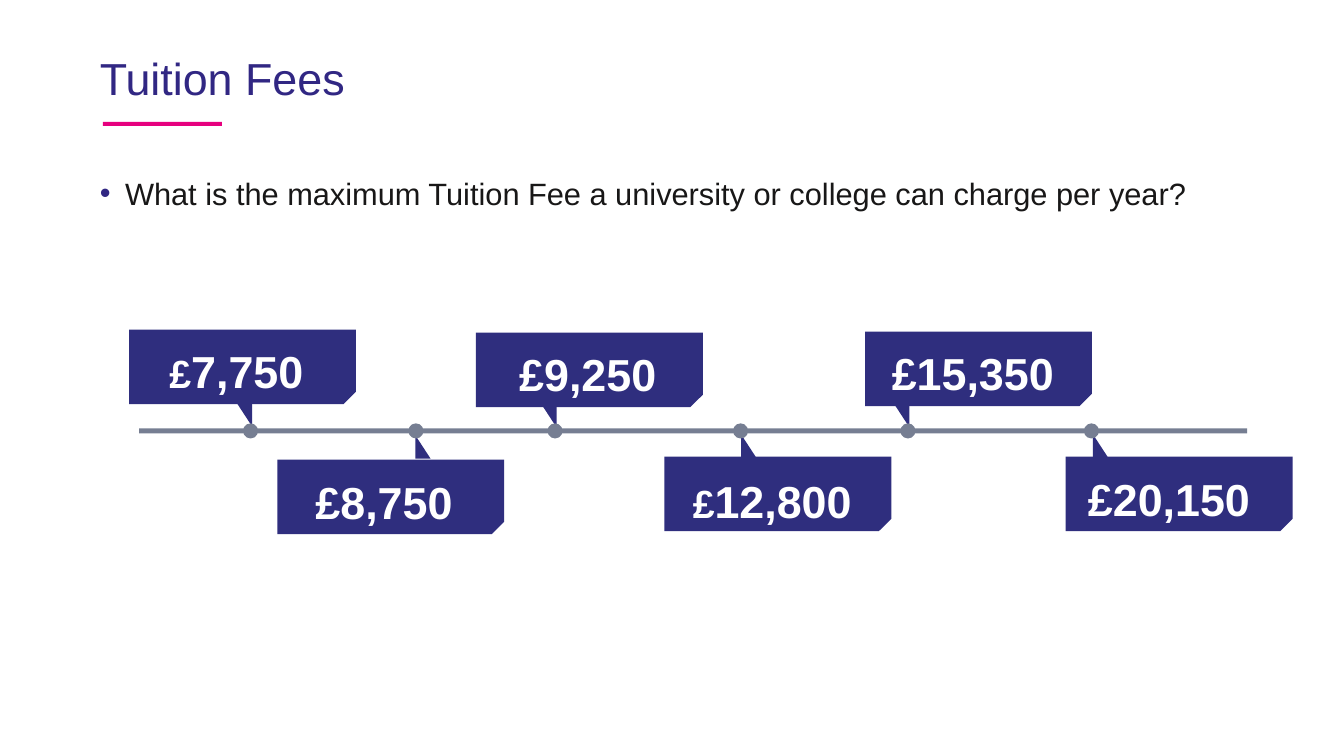
from collections import namedtuple

from lxml import etree
from pptx import Presentation
from pptx.dml.color import RGBColor
from pptx.enum.shapes import MSO_SHAPE as Preset
from pptx.enum.text import MSO_ANCHOR as Anchor, MSO_AUTO_SIZE as AutoSize, PP_ALIGN as Align
from pptx.oxml.ns import qn
from pptx.util import Inches, Pt

COLOURS = {
    "title": "312783",
    "accent": "E6007E",
    "body": "181717",
    "callout": "2F2E7E",
    "axis": "767E92",
    "amount": "FFFFFF",
}
FONT = "Arial"
CALLOUT_SIZE = (2.25, 0.74)
POINTER_SIZE = (0.15, 0.23)
DOT_SIZE = (0.15, 0.15)
DOT_TOP = 4.2

Fee = namedtuple("Fee", "amount pound_size callout label pointer dot_left above")
FEES = [
    Fee("7,750", 28, (1.28, 3.27), (1.55, 3.26, 1.59, 0.46), (2.35, 4.0), 2.41, True),
    Fee("8,750", 32, (2.75, 4.56), (2.88, 4.56, 1.86, 0.55), (4.12, 4.32), 4.05, False),
    Fee("9,250", 32, (4.72, 3.3), (4.99, 3.29, 1.68, 0.62), (5.37, 4.01), 5.43, True),
    Fee("12,800", 28, (6.59, 4.53), (6.71, 4.55, 1.9, 0.51), (7.35, 4.31), 7.27, False),
    Fee("15,350", 32, (8.58, 3.29), (8.6, 3.28, 2.1, 0.59), (8.87, 4.01), 8.93, True),
    Fee("20,150", 32, (10.57, 4.53), (10.53, 4.53, 2.13, 0.6), (10.84, 4.31), 10.75, False),
]


def colour(name):
    return RGBColor.from_string(COLOURS[name])


def style(paragraph, size, colour_name, bold=False):
    font = paragraph.font
    font.name = FONT
    font.size = Pt(size)
    font.bold = bold
    font.color.rgb = colour(colour_name)


def add_solid(slide, preset, place, fill):
    solid = slide.shapes.add_shape(preset, *map(Inches, place))
    solid.shadow.inherit = False
    solid.fill.solid()
    solid.fill.fore_color.rgb = colour(fill)
    solid.line.fill.background()
    return solid


def fill_placeholder(placeholder, place, text, anchor):
    placeholder.left, placeholder.top, placeholder.width, placeholder.height = map(Inches, place)
    frame = placeholder.text_frame
    frame.text = text
    frame.word_wrap = True
    frame.auto_size = AutoSize.NONE
    frame.vertical_anchor = anchor
    paragraph = frame.paragraphs[0]
    paragraph.alignment = Align.LEFT
    paragraph.space_before = Pt(0)
    return paragraph


def add_bullet(paragraph, colour_name):
    properties = paragraph._p.get_or_add_pPr()
    properties.set("marL", str(Inches(0.25)))
    properties.set("indent", str(Inches(-0.25)))
    bullet_colour = etree.SubElement(properties, qn("a:buClr"))
    etree.SubElement(bullet_colour, qn("a:srgbClr")).set("val", COLOURS[colour_name])
    etree.SubElement(properties, qn("a:buFont")).set("typeface", FONT)
    etree.SubElement(properties, qn("a:buChar")).set("char", "•")


def add_callout(slide, fee):
    callout = add_solid(slide, Preset.SNIP_1_RECTANGLE, fee.callout + CALLOUT_SIZE, "callout")
    callout._element.spPr.find(qn("a:xfrm")).set("flipV", "1")


def add_pointer(slide, fee):
    pointer = add_solid(slide, Preset.RIGHT_TRIANGLE, fee.pointer + POINTER_SIZE, "callout")
    if fee.above:
        pointer.rotation = 180


def add_amount(slide, fee):
    frame = slide.shapes.add_textbox(*map(Inches, fee.label)).text_frame
    frame.word_wrap = True
    frame.margin_left = frame.margin_right = Inches(0.07)
    frame.margin_top = frame.margin_bottom = Inches(0.04)
    paragraph = frame.paragraphs[0]
    paragraph.alignment = Align.CENTER
    paragraph.line_spacing = 1.2
    style(paragraph, 32, "amount", bold=True)
    if fee.pound_size == 32:
        paragraph.add_run().text = "£" + fee.amount
    else:
        pound = paragraph.add_run()
        pound.text = "£"
        pound.font.size = Pt(fee.pound_size)
        paragraph.add_run().text = fee.amount


def main():
    deck = Presentation()
    deck.slide_width, deck.slide_height = Inches(13.33), Inches(7.5)
    slide = deck.slides.add_slide(deck.slide_layouts[1])

    heading = fill_placeholder(
        slide.shapes.title, (0.89, 0.38, 11.56, 0.71), "Tuition Fees", Anchor.BOTTOM)
    heading.line_spacing = 0.9
    style(heading, 32, "title")
    add_solid(slide, Preset.RECTANGLE, (1.02, 1.21, 1.18, 0.04), "accent")

    question = fill_placeholder(
        slide.placeholders[1], (0.89, 1.68, 11.97, 0.71),
        "What is the maximum Tuition Fee a university or college can charge per year?",
        Anchor.TOP)
    add_bullet(question, "title")
    style(question, 22, "body")

    add_solid(slide, Preset.RECTANGLE, (1.38, 4.25, 10.99, 0.05), "axis")
    for fee in FEES:
        add_callout(slide, fee)
        add_pointer(slide, fee)
        add_solid(slide, Preset.OVAL, (fee.dot_left, DOT_TOP) + DOT_SIZE, "axis")
        add_amount(slide, fee)

    deck.save("out.pptx")


if __name__ == "__main__":
    main()
